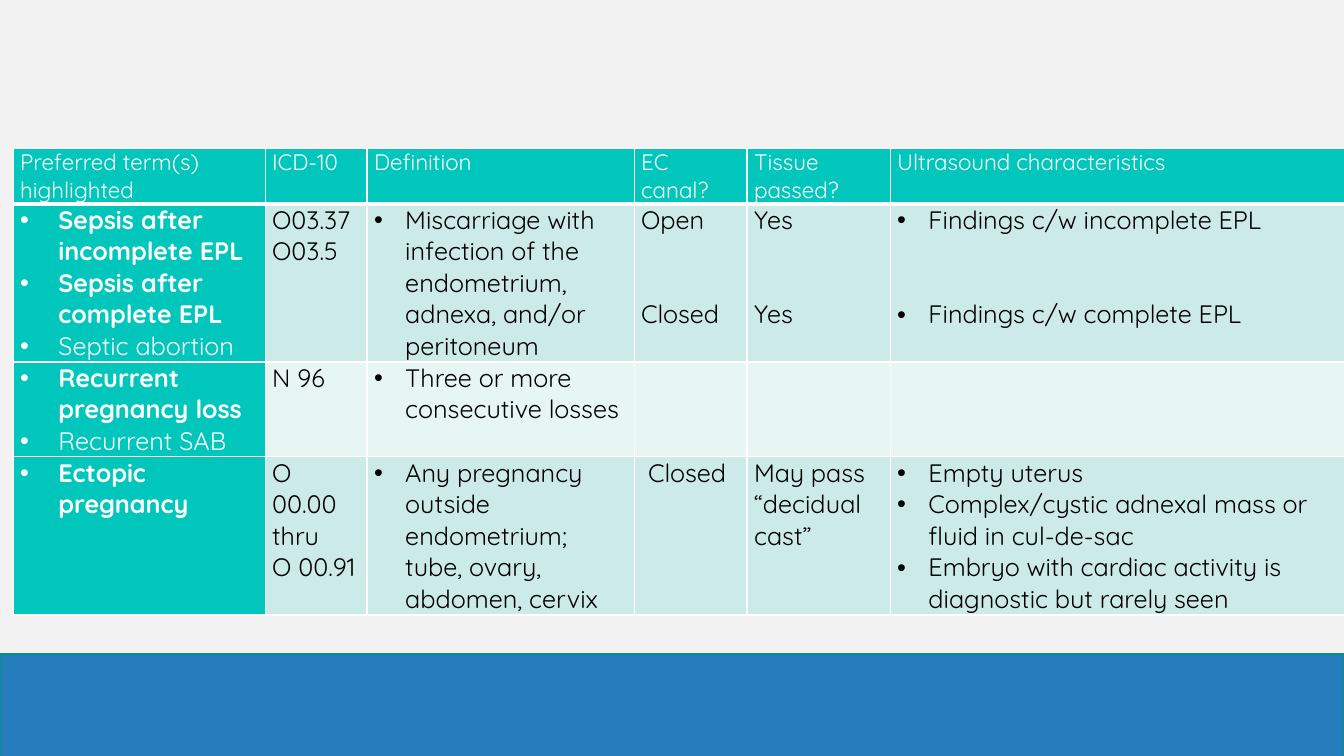
"""Build a slide with a table of early pregnancy loss terms above a blue band."""
from lxml import etree
from pptx import Presentation
from pptx import util as u
from pptx.dml.color import RGBColor
from pptx.enum import shapes
from pptx.oxml.ns import qn

COLORS = {"background": "F2F2F2", "band": "277CBE", "band_line": "00928A", "teal": "00C6BB",
          "odd": "CCEAE7", "even": "E7F5F3", "white": "FFFFFF", "black": "000000"}
FONT = "Quicksand"
HEADERS = [["Preferred term(s) highlighted"], ["ICD-10"], ["Definition"], ["EC", "canal?"],
           ["Tissue passed?"], ["Ultrasound characteristics"]]
ROWS = [
    [["Sepsis after incomplete EPL", "Sepsis after complete EPL", "Septic abortion"],
     ["O03.37", "O03.5"],
     ["Miscarriage with infection of the endometrium, adnexa, and/or peritoneum"],
     ["Open", "Closed"], ["Yes", "Yes"],
     ["Findings c/w incomplete EPL", "Findings c/w complete EPL"]],
    [["Recurrent pregnancy loss", "Recurrent SAB"], ["N 96"],
     ["Three or more consecutive losses"], [], [], []],
    [["Ectopic pregnancy"], ["O 00.00", "thru", "O 00.91"],
     ["Any pregnancy outside endometrium; tube, ovary, abdomen, cervix"],
     [" Closed"], ["May pass “decidual cast”"],
     ["Empty uterus", "Complex/cystic adnexal mass or fluid in cul-de-sac",
      "Embryo with cardiac activity is diagnostic but rarely seen"]],
]
PLAIN_TERMS = {"Septic abortion", "Recurrent SAB"}
COL_WIDTHS = [2.5, 1.01, 2.65, 1.12, 1.42, 4.51]
ROW_HEIGHTS = [0.55, 1.56, 0.94, 1.57]
BULLET_INDENTS = {0: 0.38, 2: 0.31, 5: 0.31}
OUTCOME_COLS = {3, 4, 5}
OUTCOME_GAP = 45
MARGINS = {"margin_left": u.Inches(0.07), "margin_right": u.Inches(0.07),
           "margin_top": 0, "margin_bottom": 0}


def rgb(name):
    return RGBColor.from_string(COLORS[name])


def set_borders(cell, bottom):
    tc_pr = cell._tc.get_or_add_tcPr()
    for side, width in {"lnL": 1, "lnR": 1, "lnT": 1, "lnB": bottom}.items():
        line = etree.SubElement(tc_pr, qn(f"a:{side}"), w=str(u.Pt(width)))
        fill = etree.SubElement(line, qn("a:solidFill"))
        etree.SubElement(fill, qn("a:srgbClr"), val=COLORS["white"])


def set_bullet(p, indent):
    p_pr = p._p.get_or_add_pPr()
    p_pr.set("marL", str(u.Inches(indent)))
    p_pr.set("indent", str(-u.Inches(indent)))
    etree.SubElement(p_pr, qn("a:buFont"), typeface="Arial")
    etree.SubElement(p_pr, qn("a:buChar"), char="•")


def fill_cell(cell, lines, row, col):
    header = row == 0
    teal = header or col == 0
    for name, value in MARGINS.items():
        setattr(cell, name, value)
    set_borders(cell, 3 if header else 1)
    cell.fill.solid()
    cell.fill.fore_color.rgb = rgb("teal" if teal else "odd" if row % 2 else "even")
    tf = cell.text_frame
    for i, line in enumerate(lines):
        p = tf.add_paragraph() if i else tf.paragraphs[0]
        if i and row == 1 and col in OUTCOME_COLS:
            p.space_before = u.Pt(OUTCOME_GAP)
        if not header and col in BULLET_INDENTS:
            set_bullet(p, BULLET_INDENTS[col])
        r = p.add_run()
        r.text = line
        formats = {"name": FONT, "size": u.Pt(16 if header else 18),
                   "bold": not header and col == 0 and line not in PLAIN_TERMS}
        for name, value in formats.items():
            setattr(r.font, name, value)
        r.font.color.rgb = rgb("white" if teal else "black")


def add_band(s):
    sp = s.shapes.add_shape(shapes.MSO_SHAPE.RECTANGLE, 0, u.Inches(6.49),
                            u.Inches(13.33), u.Inches(1.06))
    sp.shadow.inherit = False
    sp.fill.solid()
    sp.fill.fore_color.rgb = rgb("band")
    sp.line.color.rgb = rgb("band_line")
    sp.line.width = u.Pt(1.25)


def add_terms_table(s):
    grid = [HEADERS] + ROWS
    table = s.shapes.add_table(len(grid), len(HEADERS), u.Inches(0.13), u.Inches(1.47),
                               u.Inches(sum(COL_WIDTHS)), u.Inches(sum(ROW_HEIGHTS))).table
    for column, width in zip(table.columns, COL_WIDTHS):
        column.width = u.Inches(width)
    for table_row, height in zip(table.rows, ROW_HEIGHTS):
        table_row.height = u.Inches(height)
    for row, cells in enumerate(grid):
        for col, lines in enumerate(cells):
            fill_cell(table.cell(row, col), lines, row, col)


def main():
    prs = Presentation()
    prs.slide_width, prs.slide_height = u.Inches(13.33), u.Inches(7.5)
    s = prs.slides.add_slide(prs.slide_layouts[6])
    s.background.fill.solid()
    s.background.fill.fore_color.rgb = rgb("background")
    add_band(s)
    add_terms_table(s)
    prs.save("out.pptx")


if __name__ == "__main__":
    main()
